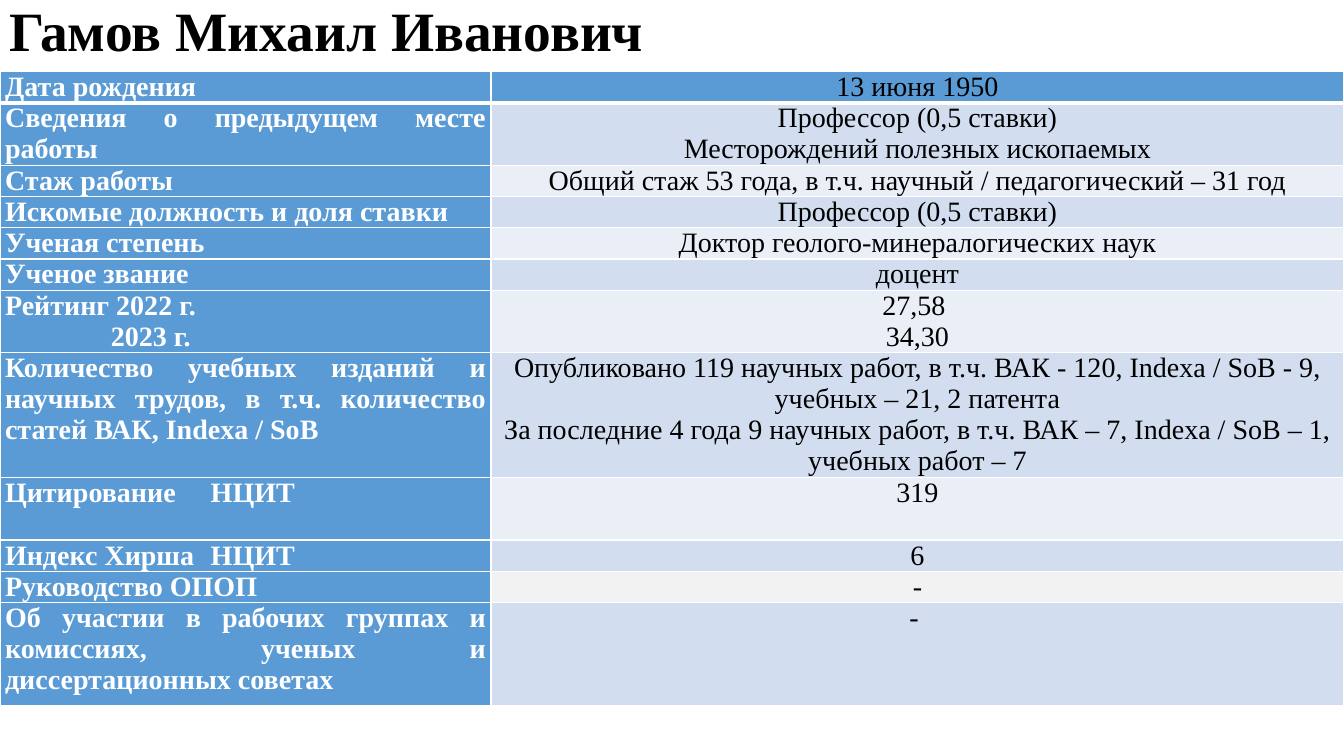
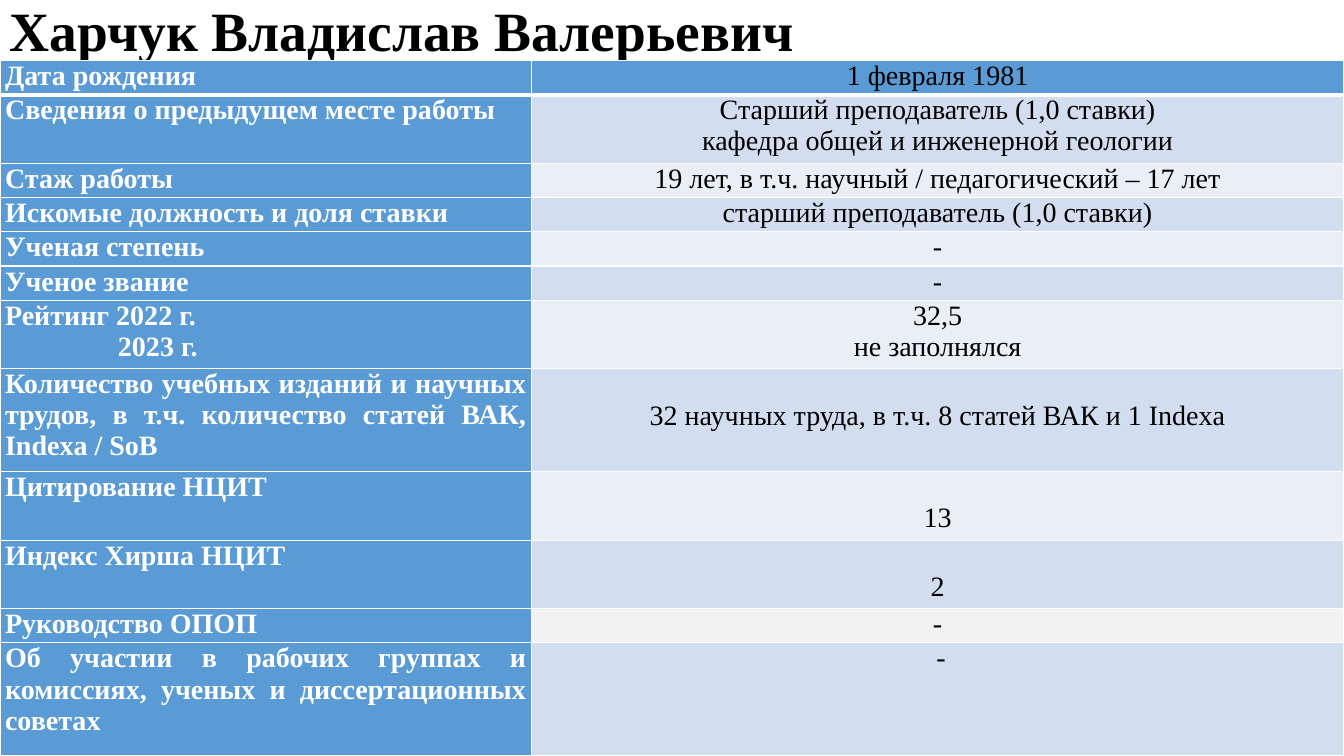
from dataclasses import dataclass

from lxml.etree import SubElement
from pptx import Presentation
from pptx.dml.color import RGBColor
from pptx.enum.text import MSO_ANCHOR as Anchor, MSO_AUTO_SIZE as AutoSize, PP_ALIGN as Align
from pptx.oxml.ns import qn
from pptx.util import Inches, Pt

COLORS = {
    "title": "000000",
    "label": "FFFFFF",
    "value": "000000",
    "border": "FFFFFF",
    "accent": "5B9BD5",
    "band_dark": "D2DEEF",
    "band_light": "EAEFF7",
    "band_gray": "F2F2F2",
}
FONT = "Times New Roman"
SLIDE_WIDTH, SLIDE_HEIGHT = 13.33, 7.5
TEXT_LINE = 0.31
TAB_STOP = 2.04
GRAY_ROW = 10

TITLE_FONT = {"name": FONT, "size": Pt(39.6), "bold": True}
LABEL_FONT = {"name": FONT, "size": Pt(20), "bold": True}
VALUE_FONT = {"name": FONT, "size": Pt(20), "bold": False}
TITLE_FRAME = {"word_wrap": True, "auto_size": AutoSize.NONE, "vertical_anchor": Anchor.MIDDLE}
TABLE_FLAGS = {"first_row": False, "horz_banding": False}
CELL_MARGINS = {
    "margin_left": Inches(0.05),
    "margin_right": Inches(0.05),
    "margin_top": 0,
    "margin_bottom": 0,
}


@dataclass
class Profile:
    name: str
    top: float
    bottom: float
    label_width: float
    line_height: float
    row_lines: list
    year_indent: float
    index_gap: str
    values: list
    lowered_rows: tuple = ()


PROFILES = [
    Profile(
        name="Гамов Михаил Иванович",
        top=0.71,
        bottom=7,
        label_width=4.87,
        line_height=0.31,
        row_lines=[1, 2, 1, 1, 1, 1, 2, 4, 2, 1, 1],
        year_indent=1.05,
        index_gap="\t",
        values=[
            ["13 июня 1950"],
            ["Профессор (0,5 ставки)", "Месторождений полезных ископаемых"],
            ["Общий стаж 53 года, в т.ч. научный / педагогический ‒ 31 год"],
            ["Профессор (0,5 ставки)"],
            ["Доктор геолого-минералогических наук"],
            ["доцент"],
            ["27,58 ", "34,30"],
            [
                "Опубликовано 119 научных работ, в т.ч. ВАК - 120, Indexa / SoB - 9, "
                "учебных ‒ 21, 2 патента",
                "За последние 4 года 9 научных работ, в т.ч. ВАК – 7, Indexa / SoB ‒ 1, "
                "учебных работ ‒ 7",
            ],
            ["319"],
            ["6"],
            ["-"],
            ["- "],
        ],
    ),
    Profile(
        name="Харчук Владислав Валерьевич",
        top=0.6,
        bottom=7.5,
        label_width=5.27,
        line_height=0.34,
        row_lines=[1, 2, 1, 1, 1, 1, 2, 3, 2, 2, 1],
        year_indent=1.12,
        index_gap=" ",
        values=[
            ["1 февраля 1981"],
            ["Старший преподаватель (1,0 ставки)", "кафедра общей и инженерной геологии"],
            ["19 лет, в т.ч. научный / педагогический – 17 лет"],
            ["старший преподаватель (1,0 ставки)"],
            ["-"],
            ["-"],
            ["32,5", "не заполнялся"],
            ["32 научных труда, в т.ч. 8 статей ВАК и 1 Indexa"],
            ["13"],
            ["2"],
            ["-"],
            [" -"],
        ],
        lowered_rows=(7, 8, 9),
    ),
]


def row_labels(gap):
    return [
        ["Дата рождения"],
        ["Сведения о предыдущем месте работы"],
        ["Стаж работы"],
        ["Искомые должность и доля ставки"],
        ["Ученая степень"],
        ["Ученое звание"],
        ["Рейтинг 2022 г.", "2023 г."],
        ["Количество учебных изданий и научных трудов, в т.ч. количество статей ВАК, Indexa / SoB"],
        [f"Цитирование{gap}НЦИТ"],
        [f"Индекс Хирша{gap}НЦИТ"],
        ["Руководство ОПОП"],
        ["Об участии в рабочих группах и комиссиях, ученых и диссертационных советах"],
    ]


def apply_format(target, values):
    for attribute, value in values.items():
        setattr(target, attribute, value)


def rgb(key):
    return RGBColor.from_string(COLORS[key])


def write_paragraphs(text_frame, lines, font, color, paragraph_format):
    for index, line in enumerate(lines):
        paragraph = text_frame.add_paragraph() if index else text_frame.paragraphs[0]
        apply_format(paragraph, paragraph_format)
        run = paragraph.add_run()
        run.text = line
        apply_format(run.font, font)
        run.font.color.rgb = rgb(color)


def add_title(slide, name):
    title = slide.shapes.add_textbox(0, 0, Inches(9.74), Inches(0.66))
    apply_format(title.text_frame, TITLE_FRAME)
    write_paragraphs(title.text_frame, [name], TITLE_FONT, "title", {"line_spacing": 0.9})


def set_borders(cell, row_index):
    properties = cell._tc.get_or_add_tcPr()
    widths = {"L": 1, "R": 1, "T": 3 if row_index == 1 else 1, "B": 3 if row_index == 0 else 1}
    for side, width in widths.items():
        line = SubElement(properties, qn(f"a:ln{side}"), w=str(Pt(width)))
        fill = SubElement(line, qn("a:solidFill"))
        SubElement(fill, qn("a:srgbClr"), val=COLORS["border"])


def fill_cell(cell, row_index, lines, font, color, align, background):
    apply_format(cell, CELL_MARGINS)
    set_borders(cell, row_index)
    cell.fill.solid()
    cell.fill.fore_color.rgb = rgb(background)
    write_paragraphs(cell.text_frame, lines, font, color, {"alignment": align})


def value_background(row_index):
    if row_index == 0:
        return "accent"
    if row_index == GRAY_ROW:
        return "band_gray"
    return "band_dark" if row_index % 2 else "band_light"


def place_label_offsets(cell, year_indent):
    for index, paragraph in enumerate(cell.text_frame.paragraphs):
        properties = paragraph._p.get_or_add_pPr()
        if index:
            properties.set("indent", str(Inches(year_indent)))
        if "\t" in paragraph.text:
            tabs = SubElement(properties, qn("a:tabLst"))
            SubElement(tabs, qn("a:tab"), pos=str(Inches(TAB_STOP)), algn="l")


def add_profile_table(slide, profile):
    height = profile.bottom - profile.top
    row_heights = [count * profile.line_height for count in profile.row_lines]
    row_heights.append(height - sum(row_heights))
    frame = slide.shapes.add_table(
        len(row_heights), 2, 0, Inches(profile.top), Inches(SLIDE_WIDTH), Inches(height)
    )
    table = frame.table
    apply_format(table, TABLE_FLAGS)
    for column, width in zip(table.columns, (profile.label_width, SLIDE_WIDTH - profile.label_width)):
        column.width = Inches(width)

    rows = zip(row_heights, row_labels(profile.index_gap), profile.values)
    for index, (row_height, label, value) in enumerate(rows):
        table.rows[index].height = Inches(row_height)
        label_cell, value_cell = table.cell(index, 0), table.cell(index, 1)
        fill_cell(label_cell, index, label, LABEL_FONT, "label", Align.JUSTIFY, "accent")
        place_label_offsets(label_cell, profile.year_indent)
        fill_cell(
            value_cell, index, value, VALUE_FONT, "value", Align.CENTER, value_background(index)
        )
        if index in profile.lowered_rows:
            value_cell.margin_top = Inches(TEXT_LINE)


def main():
    presentation = Presentation()
    apply_format(
        presentation,
        {"slide_width": Inches(SLIDE_WIDTH), "slide_height": Inches(SLIDE_HEIGHT)},
    )
    for profile in PROFILES:
        slide = presentation.slides.add_slide(presentation.slide_layouts[6])
        add_title(slide, profile.name)
        add_profile_table(slide, profile)
    presentation.save("out.pptx")


if __name__ == "__main__":
    main()
